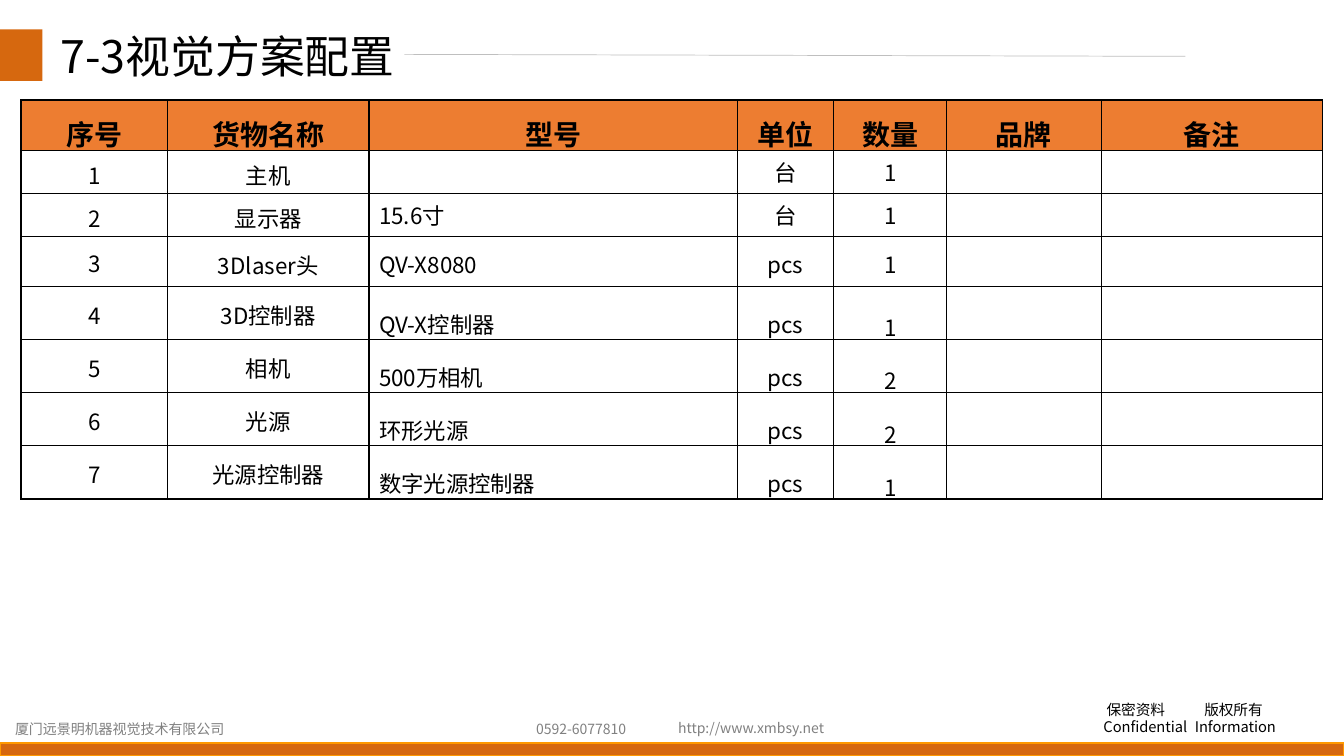
from lxml import etree
from pptx import Presentation
from pptx import util as u
from pptx.dml.color import RGBColor
from pptx.enum import shapes, text
from pptx.oxml import ns

BLACK = RGBColor(0x00, 0x00, 0x00)
WHITE = RGBColor(0xFF, 0xFF, 0xFF)
GREY = RGBColor(0x80, 0x80, 0x80)
RULE_GREY = RGBColor(0xBF, 0xBF, 0xBF)
BAND_ORANGE = RGBColor(0xD6, 0x68, 0x0F)
EDGE_ORANGE = RGBColor(0xFF, 0x99, 0x00)
HEADER_ORANGE = RGBColor(0xED, 0x7D, 0x31)
LEFT, CENTER = text.PP_ALIGN.LEFT, text.PP_ALIGN.CENTER
TOP, MIDDLE = text.MSO_ANCHOR.TOP, text.MSO_ANCHOR.MIDDLE


def add_xml(parent, tag, **values):
    return etree.SubElement(parent, ns.qn(tag), values)


class SlideBuilder:
    font_name = "Noto Sans CJK SC"

    def __init__(self, slide):
        self.slide = slide

    def fill_para(self, para, words, size, color=BLACK, bold=False, **layout):
        for name, value in layout.items():
            setattr(para, name, value)
        if not words:
            add_xml(para._p, "a:endParaRPr", sz=str(size * 100))
            return
        span = para.add_run()
        span.text = words
        font = {"name": self.font_name, "size": u.Pt(size), "bold": bold}
        for name, value in font.items():
            setattr(span.font, name, value)
        span.font.color.rgb = color
        add_xml(span.font._element, "a:ea", typeface=self.font_name)

    def bar(self, left, top, width, height, edge=None):
        bar = self.slide.shapes.add_shape(
            shapes.MSO_SHAPE.RECTANGLE, *map(u.Cm, (left, top, width, height)))
        bar.shadow.inherit = False
        bar.fill.solid()
        bar.fill.fore_color.rgb = BAND_ORANGE
        if edge is None:
            bar.line.fill.background()
        else:
            bar.line.color.rgb = edge
            bar.line.width = u.Pt(1)

    def rule(self, start, end):
        rule = self.slide.shapes.add_connector(
            shapes.MSO_CONNECTOR.STRAIGHT, *map(u.Cm, start + end))
        rule.line.color.rgb = RULE_GREY
        rule.line.width = u.Pt(0.5)
        add_xml(rule._element.spPr, "a:effectLst")

    def label(self, left, top, width, height, lines, size, color=BLACK,
              tabs=(), indent=0, **layout):
        box = self.slide.shapes.add_textbox(
            *map(u.Cm, (left, top, width, height)))
        frame = box.text_frame
        frame.word_wrap = True
        for index, words in enumerate(lines):
            para = frame.add_paragraph() if index else frame.paragraphs[0]
            if index < len(tabs):
                props = para._p.get_or_add_pPr()
                stops = add_xml(props, "a:tabLst")
                add_xml(stops, "a:tab", pos=str(u.Cm(tabs[index])), algn="l")
                if index == 0:
                    props.set("indent", str(u.Cm(indent)))
            self.fill_para(para, words, size, color, **layout)

    def border(self, cell):
        props = cell._tc.get_or_add_tcPr()
        for place, side in enumerate(("a:lnL", "a:lnR", "a:lnT", "a:lnB")):
            line = etree.Element(ns.qn(side), w=str(u.Pt(1)))
            add_xml(add_xml(line, "a:solidFill"), "a:srgbClr", val=str(BLACK))
            props.insert(place, line)

    def table(self, left, top, widths, heights, rows, style_of):
        frame = self.slide.shapes.add_table(
            len(rows), len(widths),
            *map(u.Cm, (left, top, sum(widths), sum(heights))))
        table = frame.table
        table.first_row = table.horz_banding = False
        for column, width in zip(table.columns, widths):
            column.width = u.Cm(width)
        for row, height in zip(table.rows, heights):
            row.height = u.Cm(height)
        for r, row in enumerate(rows):
            for c, words in enumerate(row):
                cell = table.cell(r, c)
                fill, anchor, style = style_of(r, c)
                cell.fill.solid()
                cell.fill.fore_color.rgb = fill
                cell.vertical_anchor = anchor
                self.border(cell)
                self.fill_para(cell.text_frame.paragraphs[0], words, **style)


HEADERS = ["序号", "货物名称", "型号", "单位", "数量", "品牌", "备注"]
GOODS = [
    ("主机", "", "台", "1"),
    ("显示器", "15.6寸", "台", "1"),
    ("3Dlaser头", "QV-X8080", "pcs", "1"),
    ("3D控制器", "QV-X控制器", "pcs", "1"),
    ("相机", "500万相机", "pcs", "2"),
    ("光源", "环形光源", "pcs", "2"),
    ("光源控制器", "数字光源控制器", "pcs", "1"),
]
# Line spacing of the columns, by kind of row
SHORT_ROW = (1.1, 1.1, 1.0, 1.0, 1.0, 1.0, 1.0)
LASER_ROW = (1.1, 1.2, 1.2, 1.2, 1.2, 1.0, 1.0)
TALL_ROW = (1.1, 1.1, 1.5, 1.5, 1.6, 1.0, 1.0)
SPACINGS = [SHORT_ROW] * 2 + [LASER_ROW] + [TALL_ROW] * 4


def goods_style(row, column):
    if row == 0:
        return HEADER_ORANGE, TOP, {
            "size": 20, "bold": True, "alignment": CENTER, "line_spacing": 1.2}
    anchor = MIDDLE if row >= 3 and column < 2 else TOP
    return WHITE, anchor, {
        "size": 16, "alignment": LEFT if column == 2 else CENTER,
        "line_spacing": SPACINGS[row - 1][column]}


def main():
    deck = Presentation()
    deck.slide_width, deck.slide_height = u.Cm(33.87), u.Cm(19.05)
    page = SlideBuilder(deck.slides.add_slide(deck.slide_layouts[6]))

    # Orange bands
    page.bar(0, 0.74, 1.07, 1.3)
    page.bar(0, 18.72, 33.87, 0.33, edge=EDGE_ORANGE)

    # Footer
    page.label(27.56, 17.53, 5.51, 1.14,
               ["保密资料\t版权所有", "Confidential\tInformation"],
               10.5, tabs=(2.05, 2.3), indent=0.08)
    for left, top, width, words in [
            (16.84, 18, 4.24, "http://www.xmbsy.net"),
            (13.26, 18.02, 3.3, "0592-6077810"),
            (0.13, 18.02, 5.97, "厦门远景明机器视觉技术有限公司")]:
        page.label(left, top, width, 0.69, [words], 10, GREY)

    # Title
    page.rule((10.19, 1.37), (29.87, 1.42))
    page.label(1.27, 0.74, 9.73, 1.8, ["7-3视觉方案配置"], 32, line_spacing=0.9)

    # Goods table
    rows = [HEADERS] + [(str(number), *goods, "", "")
                        for number, goods in enumerate(GOODS, 1)]
    page.table(0.53, 2.52, [3.69, 5.08, 9.28, 2.43, 2.85, 3.89, 5.58],
               [1.27, 1.09, 1.07, 1.27] + [1.17] * 4, rows, goods_style)

    deck.save("out.pptx")


if __name__ == "__main__":
    main()
